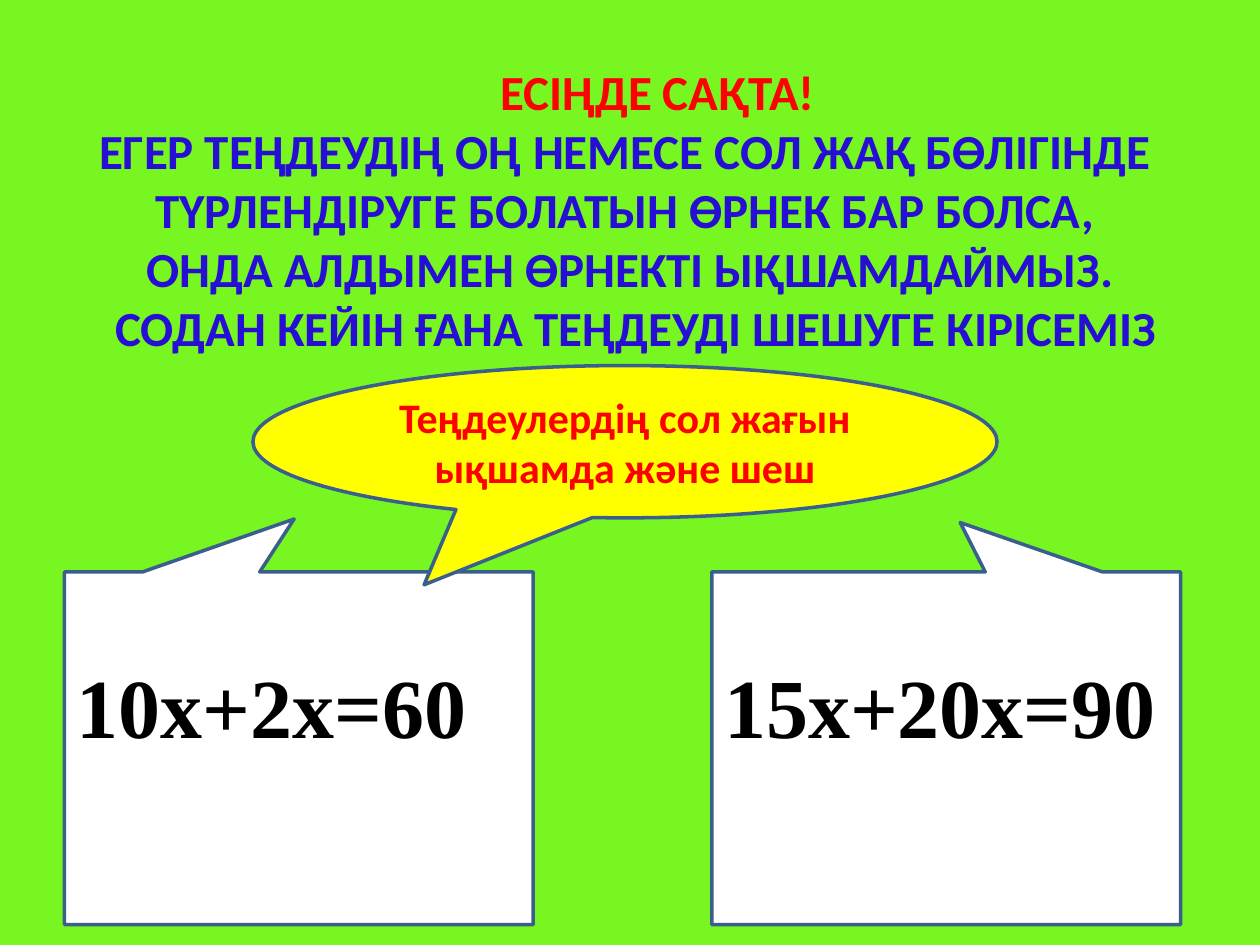
from pptx import Presentation
from pptx.dml.color import RGBColor
from pptx.enum.shapes import MSO_SHAPE
from pptx.enum.text import MSO_ANCHOR, PP_ALIGN
from pptx.util import Cm, Pt

COLORS = {
    "green": "78F622",
    "red": "FF0000",
    "blue": "260ED4",
    "white": "FFFFFF",
    "yellow": "FFFF00",
    "line": "3A5F8C",
    "black": "000000",
}


def color(name):
    return RGBColor.from_string(COLORS[name])


def write(par, text, size=28, font="Calibri", ink="red", align=PP_ALIGN.CENTER,
          left=0, right=0):
    """Fill a paragraph with bold text; left and right are indents in cm."""
    par.alignment = align
    props = par._p.get_or_add_pPr()
    props.set("marL", str(Cm(left)))
    props.set("marR", str(Cm(right)))
    run = par.add_run()
    run.text = text
    run.font.name = font
    run.font.size = Pt(size)
    run.font.bold = True
    run.font.color.rgb = color(ink)


class Board:
    def __init__(self, slide):
        self.slide = slide
        slide.background.fill.solid()
        slide.background.fill.fore_color.rgb = color("green")

    def title(self, box, lines):
        frame = self.slide.shapes.add_textbox(*map(Cm, box)).text_frame
        frame.word_wrap = True
        for i, (text, style) in enumerate(lines):
            par = frame.add_paragraph() if i else frame.paragraphs[0]
            write(par, text, **style)

    def bubble(self, kind, box, tip, text, fill="white", top=None, **style):
        """Add a callout; top is the cm above the text, centred if not given."""
        shape = self.slide.shapes.add_shape(kind, *map(Cm, box))
        shape.shadow.inherit = False
        shape.adjustments[0], shape.adjustments[1] = tip
        shape.fill.solid()
        shape.fill.fore_color.rgb = color(fill)
        shape.line.color.rgb = color("line")
        shape.line.width = Pt(2)
        frame = shape.text_frame
        frame.word_wrap = True
        frame.vertical_anchor = MSO_ANCHOR.MIDDLE
        if top is not None:
            frame.vertical_anchor = MSO_ANCHOR.TOP
            frame.margin_top = Cm(top)
        write(frame.paragraphs[0], text, **style)


def main():
    deck = Presentation()
    deck.slide_width, deck.slide_height = Cm(25.4), Cm(19.05)
    board = Board(deck.slides.add_slide(deck.slide_layouts[6]))

    board.title((1.6, 1.12, 22.2, 6.25), [
        ("ЕСІҢДЕ САҚТА!", {"left": 1.12}),
        ("ЕГЕР ТЕҢДЕУДІҢ ОҢ НЕМЕСЕ СОЛ ЖАҚ БӨЛІГІНДЕ",
         {"ink": "blue", "right": 0.22}),
        ("ТҮРЛЕНДІРУГЕ БОЛАТЫН ӨРНЕК БАР БОЛСА,",
         {"ink": "blue", "right": 0.22}),
        ("ОНДА АЛДЫМЕН ӨРНЕКТІ ЫҚШАМДАЙМЫЗ.", {"ink": "blue"}),
        ("СОДАН КЕЙІН ҒАНА ТЕҢДЕУДІ ШЕШУГЕ КІРІСЕМІЗ",
         {"ink": "blue", "left": 0.22}),
    ])

    for left, tip, sum_text in (
        (1.3, (-0.01, -0.65), "10х+2х=60"),
        (14.35, (0.03, -0.64), "15х+20х=90"),
    ):
        board.bubble(MSO_SHAPE.RECTANGULAR_CALLOUT, (left, 11.53, 9.45, 7.11),
                     tip, sum_text, top=1.66, size=48, font="Times New Roman",
                     ink="black", align=PP_ALIGN.LEFT)

    board.bubble(MSO_SHAPE.OVAL_CALLOUT, (5.1, 7.37, 15, 3.07), (-0.27, 0.94),
                 "Теңдеулердің сол жағын ықшамда және шеш",
                 fill="yellow", size=24)

    deck.save("out.pptx")


if __name__ == "__main__":
    main()
